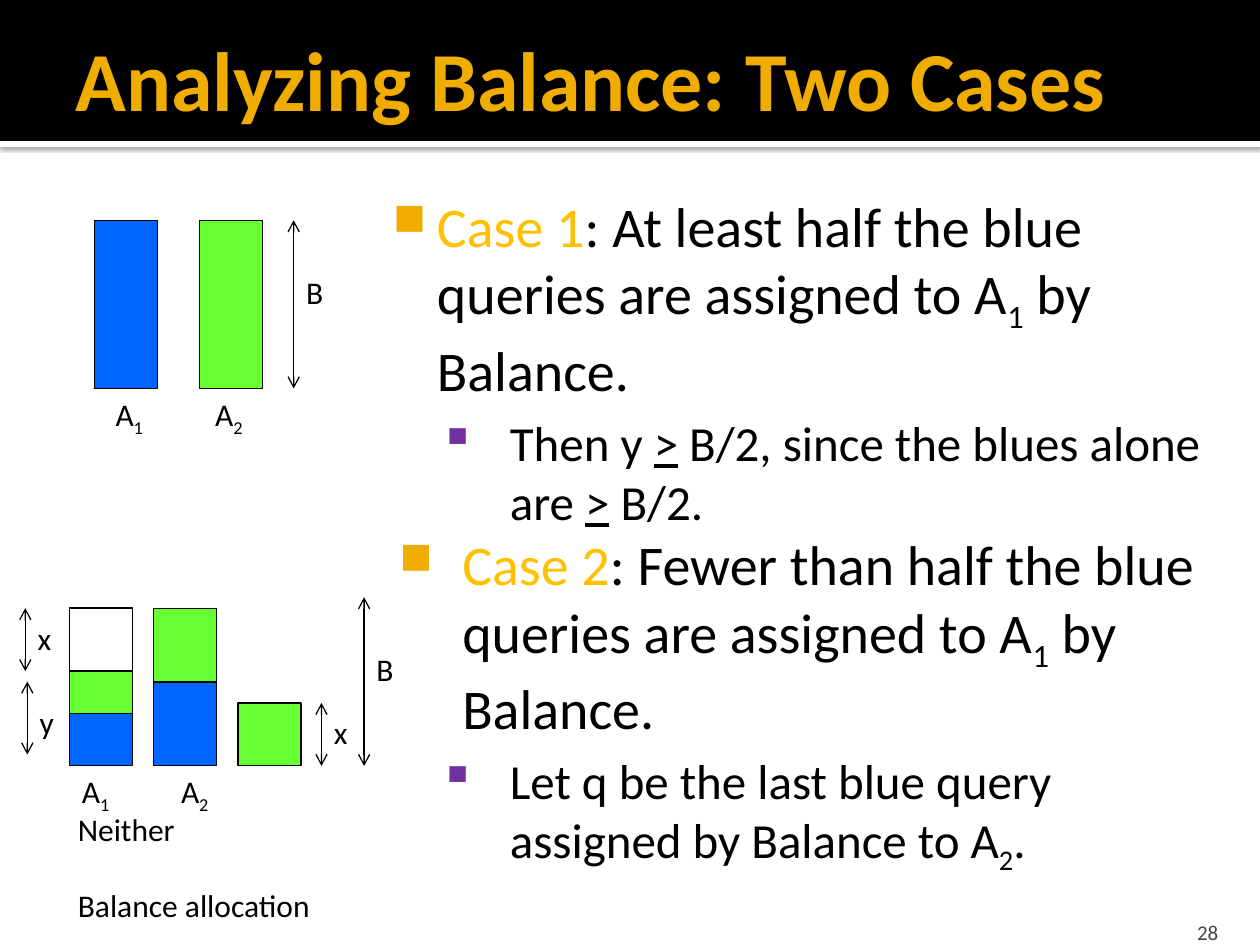
from lxml.etree import SubElement
from pptx import Presentation
from pptx.dml.color import RGBColor
from pptx.enum.shapes import MSO_CONNECTOR, MSO_SHAPE
from pptx.enum.text import MSO_ANCHOR, MSO_AUTO_SIZE, PP_ALIGN
from pptx.oxml.ns import qn
from pptx.util import Cm, Pt

FONT = "Calibri"
COLORS = {"black": "000000", "white": "FFFFFF", "title": "F0AD00",
          "case": "FFC000", "sub_bullet": "7030A0", "number": "454545",
          "blue": "0066FF", "green": "66FF33"}

# A span is plain text or (text, style); styles: case, sub, under
TITLE = "Analyzing Balance: Two Cases"
A1 = ["A", ("1", "sub")]
A2 = ["A", ("2", "sub")]
CASES = [  # level, left margin, hanging indent, spans
    (0, 1.22, 0.89, [("Case 1", "case"),
                     ": At least half the blue queries are assigned to A",
                     ("1", "sub"), " by Balance."]),
    (1, 2.69, 1.42, ["Then y ", (">", "under"),
                     " B/2, since the blues alone are ", (">", "under"),
                     " B/2."]),
    (0, 1.73, 1.27, [("Case 2", "case"),
                     ": Fewer than half the blue queries are assigned to A",
                     ("1", "sub"), " by Balance."]),
    (1, 2.69, 1.42, ["Let q be the last blue query assigned by Balance to A",
                     ("2", "sub"), "."]),
]
LEVELS = [  # text size, bullet, bullet colour, bullet size %, space before
    (32, "■", "title", 80, 0),
    (28, "▪", "sub_bullet", 100, 5.6),
]

# Lengths in cm
BAR_WIDTH = 1.27
BARS = [  # left, bottom, stack from the bottom up as (height, fill)
    (1.9, 7.83, [(3.39, "blue")]),
    (4.02, 7.83, [(3.39, "green")]),
    (1.4, 15.44, [(1.06, "blue"), (0.85, "green"), (1.27, None)]),
    (3.1, 15.44, [(1.69, "blue"), (1.48, "green")]),
    (4.8, 15.44, [(1.27, "green")]),
]
MEASURES = [  # x, top, bottom, label, label top
    (5.92, 4.44, 7.83, "B", 5.38),
    (0.51, 12.26, 13.53, "x", 12.34),
    (0.55, 13.74, 15.21, "y", 14.05),
    (6.48, 15.44 - 1.27, 15.44, "x", 14.25),
    (7.34, 12.04, 15.44, "B", 12.98),
]
BAR_LABELS = [(2.08, 7.83, A1), (4.09, 7.83, A2),
              (1.4, 15.44, A1), (3.4, 15.44, A2)]
CAPTIONS = ["Neither", "Balance allocation"]


def rgb(name):
    return RGBColor.from_string(COLORS[name])


def add_rect(page, left, top, width, height, fill, outlined=False):
    rect = page.shapes.add_shape(MSO_SHAPE.RECTANGLE, Cm(left), Cm(top),
                                 Cm(width), Cm(height))
    rect.shadow.inherit = False
    if fill:
        rect.fill.solid()
        rect.fill.fore_color.rgb = rgb(fill)
    else:
        rect.fill.background()
    if outlined:
        rect.line.color.rgb = rgb("black")
        rect.line.width = Pt(0.75)
    else:
        rect.line.fill.background()
    return rect


def add_soft_shadow(shape):
    effects = shape._element.spPr.find(qn("a:effectLst"))
    shadow = SubElement(effects, qn("a:outerShdw"), blurRad=str(Pt(2.5)),
                        dist=str(Pt(0.8)), dir="5400000", rotWithShape="0")
    color = SubElement(shadow, qn("a:srgbClr"), val=COLORS["black"])
    SubElement(color, qn("a:alpha"), val="60000")


def add_box(page, left, top, width, height, wrap=True,
            insets=(0.25, 0.13, 0.25, 0.13)):
    box = page.shapes.add_textbox(Cm(left), Cm(top), Cm(width), Cm(height))
    frame = box.text_frame
    frame.word_wrap = wrap
    frame.auto_size = (MSO_AUTO_SIZE.NONE if wrap
                       else MSO_AUTO_SIZE.SHAPE_TO_FIT_TEXT)
    (frame.margin_left, frame.margin_top,
     frame.margin_right, frame.margin_bottom) = map(Cm, insets)
    return frame


def write(para, spans, size=18, color="black", bold=False):
    for item in spans:
        text, style = (item, None) if isinstance(item, str) else item
        span = para.add_run()
        span.text = text
        font = span.font
        font.name, font.size, font.bold = FONT, Pt(size), bold
        font.color.rgb = rgb("case" if style == "case" else color)
        if style == "under":
            font.underline = True
        if style == "sub":
            font._element.set("baseline", "-25000")


def add_bullet(para, char, color, percent, margin, hanging):
    props = para._p.get_or_add_pPr()
    props.set("marL", str(Cm(margin)))
    props.set("indent", str(-Cm(hanging)))
    SubElement(SubElement(props, qn("a:buClr")), qn("a:srgbClr"),
               val=COLORS[color])
    SubElement(props, qn("a:buSzPct"), val=str(percent * 1000))
    SubElement(props, qn("a:buChar"), char=char)


def add_measure(page, x, top, bottom, label, label_top):
    """Double-headed vertical arrow with its label on the right."""
    arrow = page.shapes.add_connector(MSO_CONNECTOR.STRAIGHT, Cm(x), Cm(top),
                                      Cm(x), Cm(bottom))
    arrow.line.color.rgb = rgb("black")
    arrow.line.width = Pt(0.75)
    line = arrow.line._get_or_add_ln()
    for end in ("a:headEnd", "a:tailEnd"):
        SubElement(line, qn(end), type="arrow")
    SubElement(arrow._element.spPr, qn("a:effectLst"))
    frame = add_box(page, x, label_top, 0.91, 1.02, wrap=False)
    write(frame.paragraphs[0], [label])


def main():
    deck = Presentation()
    deck.slide_width, deck.slide_height = Cm(25.4), Cm(19.05)
    page = deck.slides.add_slide(deck.slide_layouts[6])

    add_soft_shadow(add_rect(page, 0, 2.84, 25.4, 0.13, "white"))
    add_rect(page, 0, 0, 25.4, 2.84, "black")
    title = add_box(page, 1.27, 0.2, 24.13, 2.74,
                    insets=(0.25, 0.13, 0.13, 0.13))
    title.vertical_anchor = MSO_ANCHOR.MIDDLE
    write(title.paragraphs[0], [TITLE], 48, "title", bold=True)

    body = add_box(page, 7.44, 3.61, 17.55, 14.6,
                   insets=(0.15, 0.25, 0.25, 0.13))
    for index, (level, margin, hanging, spans) in enumerate(CASES):
        para = body.add_paragraph() if index else body.paragraphs[0]
        size, char, color, percent, before = LEVELS[level]
        para.level = level
        para.space_before = Pt(before)
        add_bullet(para, char, color, percent, margin, hanging)
        write(para, spans, size)

    for left, bottom, stack in BARS:
        top = bottom
        for height, fill in stack:
            top -= height
            add_rect(page, left, top, BAR_WIDTH, height, fill, outlined=True)
    for measure in MEASURES:
        add_measure(page, *measure)
    for left, top, spans in BAR_LABELS:
        frame = add_box(page, left, top, 1.22, 1.02, wrap=False)
        write(frame.paragraphs[0], spans)

    captions = add_box(page, 1.32, 16.2, 5.61, 2.57, wrap=False)
    for index, caption in enumerate(CAPTIONS):
        para = captions.add_paragraph() if index else captions.paragraphs[0]
        para.space_before = Pt(21.6 * index)
        write(para, [caption])

    number = add_box(page, 22.78, 18.29, 2.03, 0.76,
                     insets=(0.25, 0.13, 0.25, 0))
    number.vertical_anchor = MSO_ANCHOR.BOTTOM
    number.paragraphs[0].alignment = PP_ALIGN.RIGHT
    write(number.paragraphs[0], ["28"], 12, "number")

    deck.save("out.pptx")


if __name__ == "__main__":
    main()
